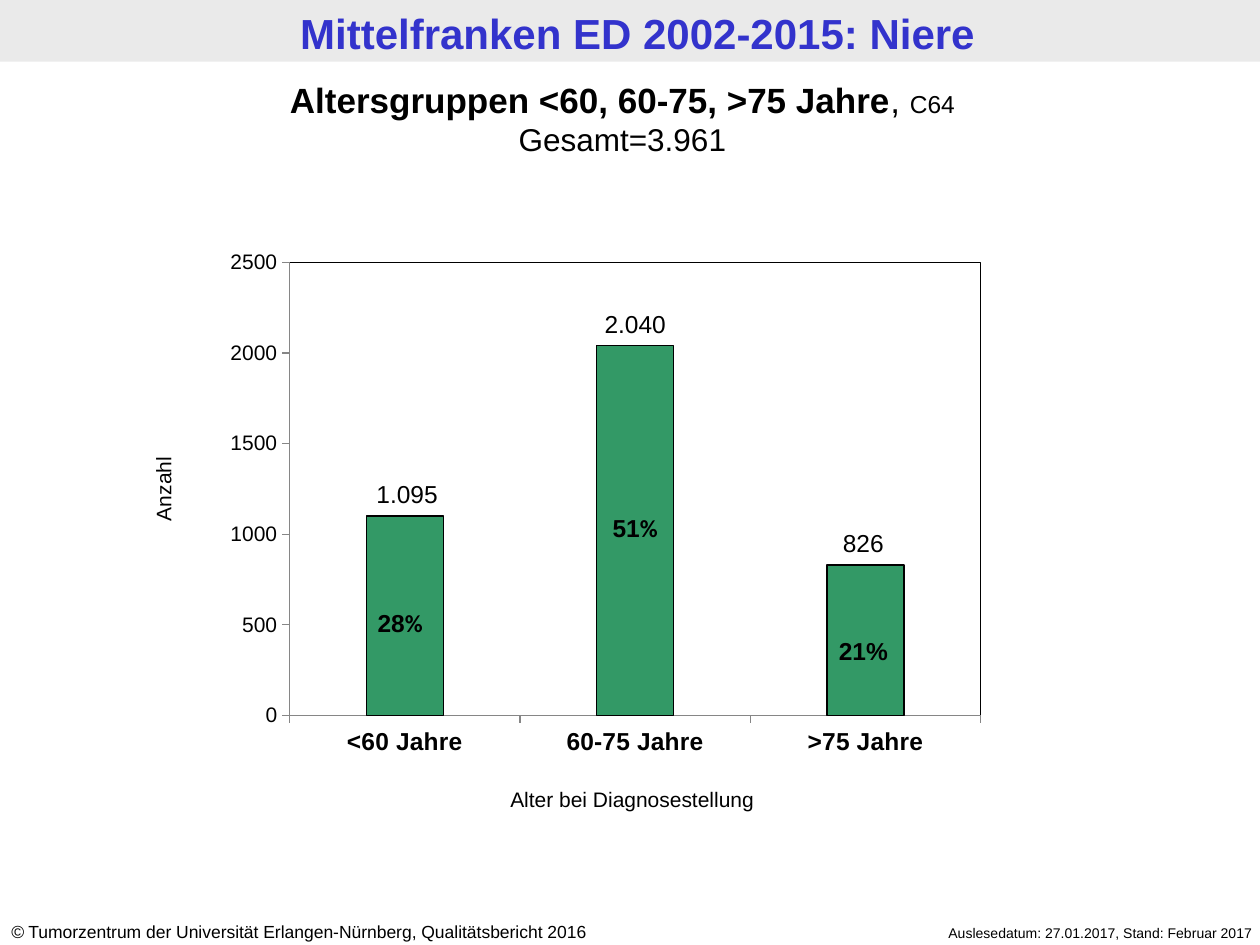
import collections
import pptx
import pptx.chart.data
import pptx.dml.color
import pptx.enum.chart
import pptx.enum.shapes
import pptx.enum.text
import pptx.oxml
import pptx.oxml.ns
import pptx.util

COLORS = {"band": "EAEAEA", "title": "3333CC", "text": "000000",
          "bar": "339966", "axis": "868686"}
WIDTH, HEIGHT = 10, 7.5
AXIS_MAX = 2500
PLOT = (0.113, 0.142, 0.786, 0.772)
AgeGroup = collections.namedtuple(
    "AgeGroup", "name cases label share percent_font percent_center percent_top")
AGE_GROUPS = [
    AgeGroup("<60 Jahre", 1100, "1.095", "28", "Calibri", 0.16, 0.75),
    AgeGroup("60-75 Jahre", 2040, "2.040", "51", "Calibri", 0.5, 0.54),
    AgeGroup(">75 Jahre", 830, "826", "21", "Arial", 0.83, 0.81),
]
Box = collections.namedtuple("Box", "left top width height")
ALIGN = pptx.enum.text.PP_ALIGN


def rgb(name):
    return pptx.dml.color.RGBColor.from_string(COLORS[name])


def part(box, left, top, width, height):
    return Box(box.left + left * box.width, box.top + top * box.height,
               width * box.width, height * box.height)


def inches(box):
    return [pptx.util.Inches(length) for length in box]


def style(font, size, bold=None, color="text", name="Arial"):
    font.size = pptx.util.Pt(size)
    font.name = name
    font.bold = bold
    font.color.rgb = rgb(color)


def add_text(page, box, text="", size=12, bold=None, color="text", align=ALIGN.CENTER):
    shape = page.shapes.add_textbox(*inches(box))
    shape.text_frame.word_wrap = True
    para = shape.text_frame.paragraphs[0]
    para.text = text
    para.alignment = align
    style(para.font, size, bold, color)
    return shape


def add_header(page, box):
    band = page.shapes.add_shape(pptx.enum.shapes.MSO_SHAPE.RECTANGLE, *inches(box))
    band.shadow.inherit = False
    band.fill.solid()
    band.fill.fore_color.rgb = rgb("band")
    band.line.fill.background()
    add_text(page, part(box, 0.006, 0.02, 1, 1),
             "Mittelfranken ED 2002-2015: Niere", 24, True, "title")


def add_heading(page, box):
    frame = add_text(page, box, size=20).text_frame
    para = frame.paragraphs[0]
    para.add_run().text = "Altersgruppen <60, 60-75, >75 Jahre"
    para.runs[0].font.bold = True
    para.add_run().text = ", "
    code = para.add_run()
    code.text = "C64"
    code.font.size = pptx.util.Pt(14)
    total = frame.add_paragraph()
    total.text = "Gesamt=3.961"
    total.alignment = ALIGN.CENTER
    style(total.font, 18)


def set_plot_frame(chart):
    qn = pptx.oxml.ns.qn
    area = chart._chartSpace.find(".//" + qn("c:plotArea"))
    for layout in area.findall(qn("c:layout")):
        area.remove(layout)
    sides = "".join(f'<c:{side} val="{share}"/>' for side, share in zip("xywh", PLOT))
    layout = pptx.oxml.parse_xml(
        f'<c:layout {pptx.oxml.ns.nsdecls("c")}><c:manualLayout>'
        '<c:layoutTarget val="inner"/><c:xMode val="edge"/><c:yMode val="edge"/>'
        + sides + '</c:manualLayout></c:layout>')
    area.insert(0, layout)
    area.append(pptx.oxml.parse_xml(
        f'<c:spPr {pptx.oxml.ns.nsdecls("c", "a")}><a:noFill/><a:ln w="9525"><a:solidFill>'
        f'<a:srgbClr val="{COLORS["text"]}"/></a:solidFill></a:ln></c:spPr>'))


def style_axis(axis, size, bold):
    axis.has_major_gridlines = False
    axis.major_tick_mark = pptx.enum.chart.XL_TICK_MARK.OUTSIDE
    axis.minor_tick_mark = pptx.enum.chart.XL_TICK_MARK.NONE
    axis.format.line.color.rgb = rgb("axis")
    axis.format.line.width = pptx.util.Pt(0.75)
    style(axis.tick_labels.font, size, bold)


def add_columns(page, box):
    data = pptx.chart.data.CategoryChartData()
    data.categories = [group.name for group in AGE_GROUPS]
    data.add_series("Anzahl", [group.cases for group in AGE_GROUPS])
    chart = page.shapes.add_chart(
        pptx.enum.chart.XL_CHART_TYPE.COLUMN_STACKED, *inches(box), data).chart
    chart.has_legend = False
    chart.has_title = False
    style(chart.font, 18, name="Calibri")
    plot = chart.plots[0]
    plot.gap_width = 200
    plot.overlap = 100
    plot.vary_by_categories = False
    bars = plot.series[0].format
    bars.fill.solid()
    bars.fill.fore_color.rgb = rgb("bar")
    bars.line.color.rgb = rgb("text")
    bars.line.width = pptx.util.Pt(0.75)
    style_axis(chart.category_axis, 14, True)
    style_axis(chart.value_axis, 12, False)
    chart.value_axis.minimum_scale = 0
    chart.value_axis.maximum_scale = AXIS_MAX
    chart.value_axis.major_unit = 500
    set_plot_frame(chart)


def add_bar_labels(page, plot):
    width, height = 0.18, 0.095
    for index, group in enumerate(AGE_GROUPS):
        center = 0.17 + 0.33 * index
        bar_top = 1 - group.cases / AXIS_MAX
        add_text(page, part(plot, center - width / 2, bar_top - height, width, height),
                 group.label, 14)
        percent = add_text(page, part(plot, group.percent_center - width / 2,
                                      group.percent_top, width, height), size=14, bold=True)
        para = percent.text_frame.paragraphs[0]
        para.add_run().text = group.share
        sign = para.add_run()
        sign.text = "%"
        sign.font.name = group.percent_font


def add_age_chart(page, box):
    add_columns(page, box)
    add_bar_labels(page, part(box, *PLOT))
    add_text(page, part(box, 0.264, 1.024, 0.477, 0.064), "Alter bei Diagnosestellung")
    add_text(page, part(box, -0.218, 0.496, 0.374, 0.064), "Anzahl").rotation = 270


def add_footer(page, box):
    credit = add_text(page, part(box, 0, 0, 0.52, 1), size=10, align=ALIGN.LEFT)
    para = credit.text_frame.paragraphs[0]
    para.add_run().text = "©"
    para.runs[0].font.italic = True
    para.add_run().text = " Tumorzentrum der Universität Erlangen-Nürnberg, Qualitätsbericht 2016"
    add_text(page, part(box, 0.66, 0.11, 0.34, 0.89),
             "Auslesedatum: 27.01.2017, Stand: Februar 2017", 8, align=ALIGN.RIGHT)


def main():
    deck = pptx.Presentation()
    deck.slide_width = pptx.util.Inches(WIDTH)
    deck.slide_height = pptx.util.Inches(HEIGHT)
    page = deck.slides.add_slide(deck.slide_layouts[6])
    add_header(page, Box(0, 0, WIDTH, 0.49))
    add_heading(page, Box(0, 0.57, 9.88, 0.74))
    add_age_chart(page, Box(1.51, 1.42, 6.98, 4.66))
    add_footer(page, Box(-0.01, 7.26, 10.05, 0.27))
    deck.save("out.pptx")


if __name__ == "__main__":
    main()
